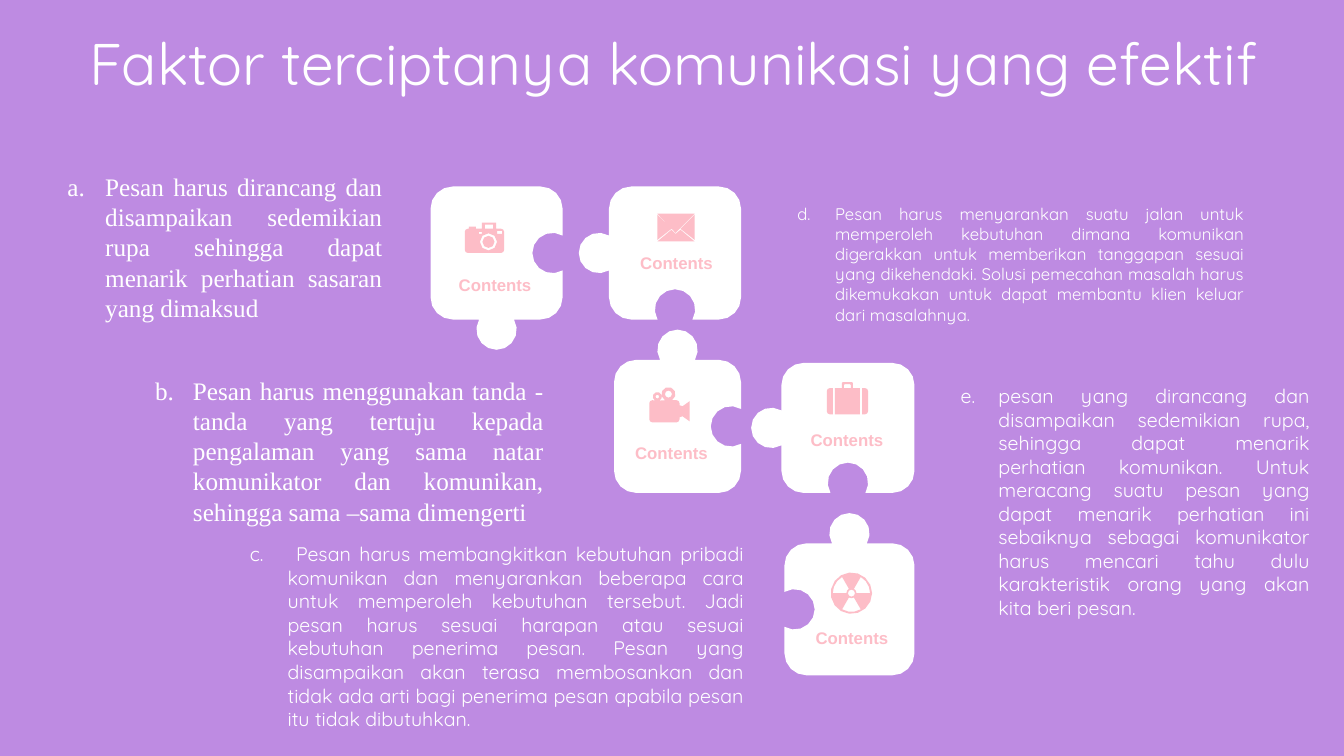
from math import ceil, cos, sin, radians
from lxml.etree import SubElement
from pptx import Presentation
from pptx.dml.color import RGBColor
from pptx.enum.text import MSO_ANCHOR, MSO_AUTO_SIZE, PP_ALIGN
from pptx.oxml.ns import qn
from pptx.util import Inches, Pt

# Grid: 1333 columns by 750 rows of square cells; all lengths count cells
CELL = Inches(0.01)
COLS, ROWS = 1333, 750
LILAC, WHITE, PINK = "BE8BE2", "FFFFFF", "FDBDC7"
color = RGBColor.from_string

prs = Presentation()
prs.slide_width, prs.slide_height = COLS * CELL, ROWS * CELL
s = prs.slides.add_slide(prs.slide_layouts[5])
s.background.fill.solid()
s.background.fill.fore_color.rgb = color(LILAC)


def arc(cx, cy, r, start=0, end=360):
    """Points of an arc, clockwise from the right; small arcs get coarser steps."""
    steps = ceil(abs(end - start) / (24 if r > 10 else 45))
    angles = [radians(start + (end - start) * i / steps) for i in range(steps + 1)]
    return [(cx + r * cos(a), cy + r * sin(a)) for a in angles]


def draw(contours, fill):
    """One filled shape; a contour inside another one is a hole."""
    contours = [[(round(x * CELL), round(y * CELL)) for x, y in c] for c in contours]
    builder = s.shapes.build_freeform(*contours[0][0], scale=1.0)
    for i, points in enumerate(contours):
        if i:
            builder.move_to(*points[0])
        builder.add_line_segments(points[1:], close=True)
    sp = builder.convert_to_shape()
    sp.shadow.inherit = False
    sp.fill.solid()
    sp.fill.fore_color.rgb = color(fill)
    sp.line.fill.background()


# Title
title = s.shapes.title
title.left, title.top, title.width, title.height = [v * CELL for v in (35, 31, 1266, 79)]
tf = title.text_frame
tf.text = "Faktor terciptanya komunikasi yang efektif"
tf.word_wrap, tf.auto_size = True, MSO_AUTO_SIZE.NONE
tf.vertical_anchor = MSO_ANCHOR.MIDDLE
p = tf.paragraphs[0]
p.alignment, p.line_spacing, p.space_before = PP_ALIGN.CENTER, 0.7, Pt(10)
font = p.runs[0].font
font.name, font.size, font.color.rgb = "Quicksand", Pt(41.9), color(WHITE)

# Puzzle pieces: body edges, then a tab (1), socket (-1) or nothing (0)
# for the top, right, bottom and left sides
CORNER, KNOB, OFFSET = 22, 20, 10
SIDES = [(1, 0), (0, 1), (-1, 0), (0, -1)]
pieces = [
    (427, 185, 558, 317, (0, -1, 1, 0)),
    (604, 185, 735, 317, (0, 0, -1, 1)),
    (609, 357, 735, 489, (1, -1, 0, 0)),
    (775, 360, 907, 489, (0, 0, -1, 1)),
    (778, 539, 907, 670, (1, 0, 0, -1)),
]
for left, top, right, bottom, knobs in pieces:
    cx, cy = (left + right) / 2, (top + bottom) / 2
    half_w, half_h = (right - left) / 2, (bottom - top) / 2
    outline = []
    for i, ((dx, dy), knob) in enumerate(zip(SIDES, knobs)):
        along, out = (half_h, half_w) if i % 2 else (half_w, half_h)
        local = []  # distance along the side, distance outwards
        if knob:
            local = [(u, out + knob * v) for u, v in arc(0, OFFSET, KNOB, 210, -30)]
        local += arc(along - CORNER, out - CORNER, CORNER, 90, 0)
        outline += [(cx + u * dx + v * dy, cy + u * dy - v * dx) for u, v in local]
    draw([outline], WHITE)

# Envelope icon
draw([
    [(652, 212), (689, 212), (670, 231)],
    [(652, 213), (666, 227), (652, 238)],
    [(689, 213), (689, 238), (675, 227)],
    [(666, 228), (670, 232), (675, 228), (689, 239.5), (652, 239.5)],
], PINK)

# Radiation icon
hub = (844.5, 588.5)
draw([arc(*hub, 20.5), arc(*hub, 3.5)]
     + [arc(*hub, 18.5, a, a + 60) + arc(*hub, 5, a + 60, a) for a in (60, 180, 300)],
     PINK)

# Camera icon
draw([
    arc(464, 230, 3, 180, 270)
    + [(465, 227), (465, 225), (472, 225), (472, 227), (478, 227), (478, 221),
       (492, 221), (492, 227)]
    + arc(497, 230, 3, 270, 360) + arc(497, 248, 3, 0, 90) + arc(464, 248, 3, 90, 180),
    arc(484.5, 240, 8.5),
    arc(484.5, 240, 6),
    [(475, 230), (478, 230), (478, 232), (475, 232)],
    [(493, 229), (498, 229), (498, 232), (493, 232)],
    [(481, 223), (489, 223), (489, 227), (481, 227)],
], PINK)

# Film camera icon
draw([
    arc(647, 400, 3, 180, 270) + arc(652, 393.5, 4.5, 120, 420)
    + arc(663, 391, 7, 120, 420) + arc(671, 400, 3, 270, 360)
    + [(674, 402), (677, 403), (684, 398), (684, 418), (677, 413), (674, 414)]
    + arc(671, 416, 3, 0, 90) + arc(647, 416, 3, 90, 180),
    arc(652, 393.5, 1.8),
    arc(663, 391, 3.5),
], PINK)

# Suitcase icon
draw([
    arc(823, 388, 3, 270, 180) + arc(823, 408, 3, 180, 90) + [(826, 411), (826, 385)],
    arc(858, 388, 3, 270, 360) + arc(858, 408, 3, 0, 90) + [(855, 411), (855, 385)],
    [(828, 385), (835, 385), (835, 380), (836, 379), (845, 379), (846, 380),
     (846, 385), (853, 385), (853, 411), (828, 411)],
    [(837, 385), (837, 382), (838, 381), (843, 381), (844, 382), (844, 385)],
], PINK)

# Texts: left, top, width, height, number in the list (0 for a label), size, font, wording
SERIF, SANS = "Times New Roman", "Quicksand"
texts = [
    (57, 165, 332, 162, 1, 18, SERIF,
     "Pesan harus dirancang dan disampaikan sedemikian rupa sehingga dapat menarik "
     "perhatian sasaran yang dimaksud"),
    (144, 367, 405, 162, 2, 18, SERIF,
     "Pesan harus menggunakan tanda - tanda yang tertuju kepada pengalaman yang sama "
     "natar komunikator dan komunikan, sehingga sama –sama dimengerti"),
    (238, 533, 510, 199, 3, 14, SANS,
     " Pesan harus membangkitkan kebutuhan pribadi komunikan dan menyarankan beberapa "
     "cara untuk memperoleh kebutuhan tersebut. Jadi pesan harus sesuai harapan atau "
     "sesuai kebutuhan penerima pesan. Pesan yang disampaikan akan terasa membosankan "
     "dan tidak ada arti bagi penerima pesan apabila pesan itu tidak dibutuhkan."),
    (781, 197, 463, 131, 4, 12, SANS,
     "Pesan harus menyarankan suatu jalan untuk memperoleh kebutuhan dimana komunikan "
     "digerakkan untuk memberikan tanggapan sesuai yang dikehendaki. Solusi pemecahan "
     "masalah harus dikemukakan untuk dapat membantu klien keluar dari masalahnya."),
    (943, 376, 366, 246, 5, 14, SANS,
     "pesan yang dirancang dan disampaikan sedemikian rupa, sehingga dapat menarik "
     "perhatian komunikan. Untuk meracang suatu pesan yang dapat menarik perhatian ini "
     "sebaiknya sebagai komunikator harus mencari tahu dulu karakteristik orang yang "
     "akan kita beri pesan."),
]
labels = [(432, 268), (612, 246), (607, 434), (781, 421), (786, 618)]
texts += [(x, y, 118, 30, 0, 12, "Arial", "Contents") for x, y in labels]

for x, y, w, h, number, size, face, wording in texts:
    tf = s.shapes.add_textbox(x * CELL, y * CELL, w * CELL, h * CELL).text_frame
    tf.word_wrap, tf.auto_size = True, MSO_AUTO_SIZE.SHAPE_TO_FIT_TEXT
    tf.text = wording
    p = tf.paragraphs[0]
    p.alignment = PP_ALIGN.JUSTIFY if number else PP_ALIGN.CENTER
    font = p.runs[0].font
    font.name, font.size, font.bold = face, Pt(size), not number
    font.color.rgb = color(WHITE if number else PINK)
    if number:
        pPr = p._p.get_or_add_pPr()
        pPr.set("marL", str(Pt(27)))
        pPr.set("indent", str(-Pt(27)))
        SubElement(pPr, qn("a:buAutoNum"), type="alphaLcPeriod", startAt=str(number))

prs.save("out.pptx")
